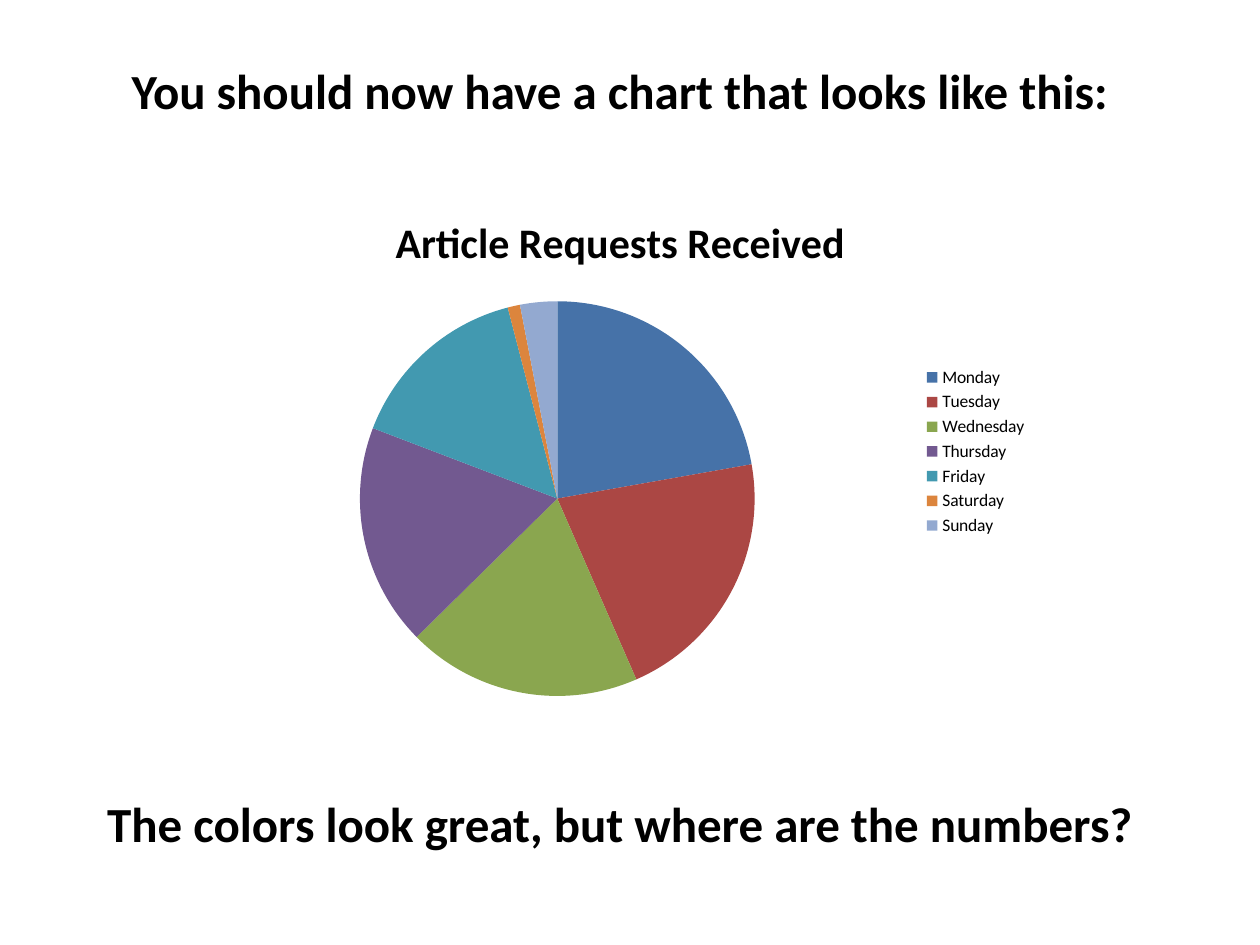
from lxml import etree
from pptx import Presentation
from pptx.chart.data import CategoryChartData
from pptx.dml.color import RGBColor
from pptx.enum import chart as ch, text as tx
from pptx.oxml.ns import qn
from pptx.util import Pt

FONT = "Calibri"
INK = "000000"
DAYS = {
    "Monday": (22, "4672A8"),
    "Tuesday": (21, "AB4744"),
    "Wednesday": (19, "8AA64F"),
    "Thursday": (18, "725990"),
    "Friday": (15, "4299B0"),
    "Saturday": (1, "DC853D"),
    "Sunday": (3, "93A9D0"),
}


def style(font, size, bold=False):
    font.name, font.size, font.bold = FONT, Pt(size), bold
    font.color.rgb = RGBColor.from_string(INK)


def write(shape, words):
    frame = shape.text_frame
    frame.word_wrap = True
    frame.vertical_anchor = tx.MSO_ANCHOR.TOP
    para = frame.paragraphs[0]
    para.alignment = tx.PP_ALIGN.CENTER
    run = para.add_run()
    run.text = words
    style(run.font, 28, True)


def place(plot, **box):
    """Fix the inner plot area, in fractions of the chart."""
    area = plot._element.getparent()
    for old in area.findall(qn("c:layout")):
        area.remove(old)
    layout = etree.Element(qn("c:layout"))
    area.insert(0, layout)
    manual = etree.SubElement(layout, qn("c:manualLayout"))
    parts = {"layoutTarget": "inner", "xMode": "edge", "yMode": "edge", **box}
    for tag, val in parts.items():
        etree.SubElement(manual, qn("c:" + tag)).set("val", str(val))


def add_pie(slide, name, left, top, width, height):
    data = CategoryChartData()
    data.categories = list(DAYS)
    data.add_series(name, [count for count, _ in DAYS.values()])
    pie = slide.shapes.add_chart(
        ch.XL_CHART_TYPE.PIE, Pt(left), Pt(top), Pt(width), Pt(height), data
    ).chart
    style(pie.font, 10)
    pie.has_title = True
    run = pie.chart_title.text_frame.paragraphs[0].add_run()
    run.text = name
    style(run.font, 24, True)
    pie.has_legend = True
    pie.legend.position = ch.XL_LEGEND_POSITION.RIGHT
    pie.legend.include_in_layout = False
    plot = pie.plots[0]
    plot.vary_by_categories = True
    for i, (_, color) in enumerate(DAYS.values()):
        fill = plot.series[0].points[i].format.fill
        fill.solid()
        fill.fore_color.rgb = RGBColor.from_string(color)
    place(plot, x=0.19, y=0.21, w=0.47, h=0.76)


def main():
    deck = Presentation()
    deck.slide_width, deck.slide_height = Pt(720), Pt(540)
    slide = deck.slides.add_slide(deck.slide_layouts[5])
    add_pie(slide, "Article Requests Received", 114.5, 108, 480, 300)
    title = slide.shapes.title
    title.left, title.top, title.width, title.height = Pt(66), Pt(31), Pt(576), Pt(41)
    write(title, "You should now have a chart that looks like this:")
    note = slide.shapes.add_textbox(Pt(18), Pt(450), Pt(672), Pt(41))
    write(note, "The colors look great, but where are the numbers?")
    deck.save("out.pptx")


if __name__ == "__main__":
    main()
